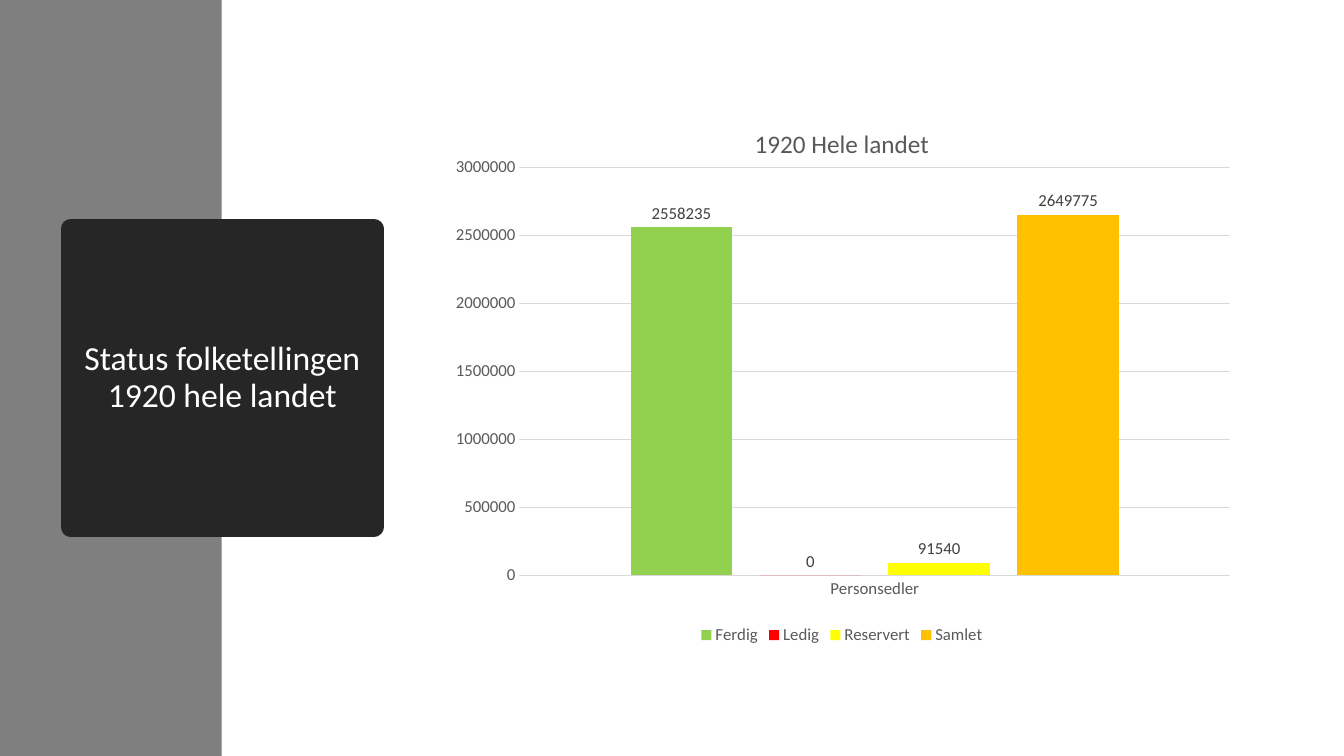
from lxml import etree
from pptx import Presentation
from pptx import util as u
from pptx.chart.data import CategoryChartData
from pptx.dml.color import RGBColor
from pptx.enum import chart as ch
from pptx.enum import shapes, text
from pptx.oxml import parse_xml
from pptx.oxml.ns import nsdecls, qn

FONT = "Calibri"
GREY, RULE = "595959", "D9D9D9"
SERIES = [
    ("Ferdig", 2558235, "92D050"),
    ("Ledig", 0, "FF0000"),
    ("Reservert", 91540, "FFFF00"),
    ("Samlet", 2649775, "FFC000"),
]


def paint(color, value):
    """Set a colour from a hex string."""
    color.rgb = RGBColor.from_string(value)


def style(font, size, value):
    """Set typeface, size and colour of a font."""
    font.name, font.size, font.bold = FONT, u.Pt(size), False
    paint(font.color, value)


def rule(line, value, width):
    """Set colour and width of a line."""
    paint(line.color, value)
    line.width = u.Pt(width)


def block(slide, box, value):
    """Add a plain filled rectangle."""
    shape = slide.shapes.add_shape(
        shapes.MSO_SHAPE.RECTANGLE, *map(u.Inches, box))
    shape.shadow.inherit = False
    shape.fill.solid()
    paint(shape.fill.fore_color, value)
    shape.line.fill.background()
    return shape


def heading(slide, words, box, value):
    """Add the title block with a thick round-cornered edge."""
    shape = block(slide, box, value)
    rule(shape.line, value, 13.75)
    etree.SubElement(shape.line._get_or_add_ln(), qn("a:round"))
    frame = shape.text_frame
    frame.text = words
    frame.word_wrap = True
    frame.vertical_anchor = text.MSO_ANCHOR.MIDDLE
    para = frame.paragraphs[0]
    para.alignment = text.PP_ALIGN.CENTER
    para.line_spacing = 0.9
    style(para.runs[0].font, 24, "FFFFFF")


def place(chart, x, y, w, h):
    """Fix the inner plot area as fractions of the chart."""
    area = chart._chartSpace.chart.plotArea
    for old in area.findall(qn("c:layout")):
        area.remove(old)
    sizes = "".join(f'<c:{tag} val="{val}"/>' for tag, val in
                    zip("xywh", (x, y, w, h)))
    area.insert(0, parse_xml(
        f'<c:layout {nsdecls("c")}><c:manualLayout>'
        '<c:layoutTarget val="inner"/><c:xMode val="edge"/>'
        f'<c:yMode val="edge"/>{sizes}</c:manualLayout></c:layout>'))


def axes(chart):
    """Format both axes and the gridlines."""
    for axis in (chart.category_axis, chart.value_axis):
        axis.major_tick_mark = axis.minor_tick_mark = ch.XL_TICK_MARK.NONE
        style(axis.tick_labels.font, 12, GREY)
    rule(chart.category_axis.format.line, RULE, 0.75)
    scale = chart.value_axis
    scale.minimum_scale, scale.maximum_scale = 0, 3000000
    scale.major_unit = 500000
    scale.format.line.fill.background()
    rule(scale.major_gridlines.format.line, RULE, 0.75)


def bars(chart):
    """Colour and label each series."""
    plot = chart.plots[0]
    plot.gap_width, plot.overlap = 219, -27
    plot.vary_by_categories = False
    for item, (_, _, value) in zip(plot.series, SERIES):
        item.format.fill.solid()
        paint(item.format.fill.fore_color, value)
        item.invert_if_negative = False
        labels = item.data_labels
        labels.show_value = True
        labels.position = ch.XL_LABEL_POSITION.OUTSIDE_END
        style(labels.font, 12, "404040")


def graph(slide, title, box):
    """Add the column chart."""
    data = CategoryChartData()
    data.categories = ["Personsedler"]
    for name, count, _ in SERIES:
        data.add_series(name, [count])
    chart = slide.shapes.add_chart(
        ch.XL_CHART_TYPE.COLUMN_CLUSTERED, *map(u.Inches, box), data).chart
    style(chart.font, 10, "000000")
    chart.has_title = True
    chart.chart_title.include_in_layout = False
    frame = chart.chart_title.text_frame
    frame.text = title
    style(frame.paragraphs[0].runs[0].font, 18, GREY)
    chart.has_legend = True
    chart.legend.position = ch.XL_LEGEND_POSITION.BOTTOM
    chart.legend.include_in_layout = False
    style(chart.legend.font, 12, GREY)
    axes(chart)
    bars(chart)
    place(chart, 0.093, 0.113, 0.897, 0.751)


def main():
    """Build and save the slide."""
    deck = Presentation()
    deck.slide_width, deck.slide_height = u.Inches(13.33), u.Inches(7.5)
    slide = deck.slides.add_slide(deck.slide_layouts[6])
    block(slide, (0, 0, 2.2, 7.5), "7F7F7F")
    heading(slide, "Status folketellingen 1920 hele landet",
            (0.7, 2.27, 3.01, 2.96), "262626")
    graph(slide, "1920 Hele landet", (4.42, 1.05, 7.86, 5.39))
    deck.save("out.pptx")


if __name__ == "__main__":
    main()
